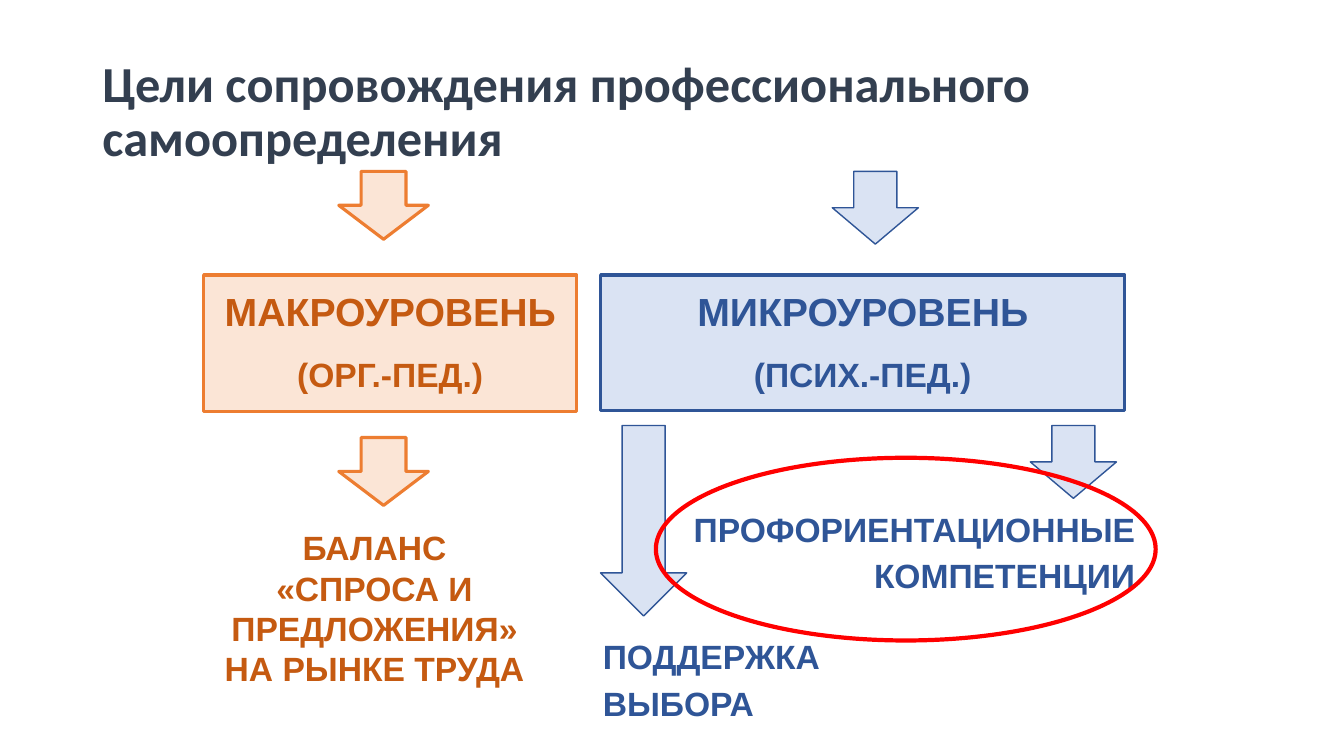
from pptx import Presentation
from pptx.dml.color import RGBColor
from pptx.enum.shapes import MSO_SHAPE
from pptx.enum.text import MSO_ANCHOR, PP_ALIGN
from pptx.util import Pt

RECTANGLE, DOWN_ARROW, OVAL = MSO_SHAPE.RECTANGLE, MSO_SHAPE.DOWN_ARROW, MSO_SHAPE.OVAL
TOP, MIDDLE = MSO_ANCHOR.TOP, MSO_ANCHOR.MIDDLE
LEFT, CENTER, RIGHT = PP_ALIGN.LEFT, PP_ALIGN.CENTER, PP_ALIGN.RIGHT

SLATE = RGBColor(0x33, 0x3F, 0x50)
PEACH = RGBColor(0xFB, 0xE5, 0xD6)
ORANGE = RGBColor(0xED, 0x7D, 0x31)
RUST = RGBColor(0xC5, 0x5A, 0x11)
PALE_BLUE = RGBColor(0xDA, 0xE3, 0xF3)
BLUE = RGBColor(0x2F, 0x55, 0x97)
RED = RGBColor(0xFF, 0x00, 0x00)

ARROW_TOP = 122.4
LEVEL_TOP = 196.5
MACRO_LEFT, MICRO_LEFT = 145.5, 429


def write_text(shape, lines, color, align, spacing=1.0, after=0, font="Arial", anchor=TOP):
    """Fill a shape with paragraphs given as (text, size) pairs."""
    frame = shape.text_frame
    frame.word_wrap = True
    frame.vertical_anchor = anchor
    frame.text = "\n".join(text for text, _ in lines)
    for para, (_, size) in zip(frame.paragraphs, lines):
        para.alignment = align
        para.line_spacing = spacing
        para.space_after = Pt(after)
        for span in para.runs:
            span.font.name = font
            span.font.size = Pt(size)
            span.font.bold = True
            span.font.color.rgb = color


def add_label(page, bounds, lines, color, align, **style):
    box = page.shapes.add_textbox(*map(Pt, bounds))
    write_text(box, lines, color, align, **style)


def add_outlined(page, kind, bounds, fill, line, weight):
    shape = page.shapes.add_shape(kind, *map(Pt, bounds))
    shape.shadow.inherit = False
    if fill is None:
        shape.fill.background()
    else:
        shape.fill.solid()
        shape.fill.fore_color.rgb = fill
    shape.line.color.rgb = line
    shape.line.width = Pt(weight)
    return shape


def add_level(page, bounds, name, scope, fill, line, color):
    box = add_outlined(page, RECTANGLE, bounds, fill, line, 2.25)
    write_text(box, [(name, 28), (scope, 24)], color, CENTER, spacing=1.15, after=10)


def add_macro_arrow(page, top):
    add_outlined(page, DOWN_ARROW, (242, top, 64, 48.5), PEACH, ORANGE, 2.25)


def add_micro_arrow(page, left, top, height):
    add_outlined(page, DOWN_ARROW, (left, top, 61.5, height), PALE_BLUE, BLUE, 1)


def main():
    deck = Presentation()
    deck.slide_width, deck.slide_height = Pt(960), Pt(540)
    page = deck.slides.add_slide(deck.slide_layouts[6])

    add_label(page, (66, 28.8, 828, 104.4),
              [("Цели сопровождения профессионального самоопределения", 36)],
              SLATE, LEFT, spacing=0.9, font="Calibri", anchor=MIDDLE)

    add_level(page, (MACRO_LEFT, LEVEL_TOP, 266.5, 97.5), "МАКРОУРОВЕНЬ", "(ОРГ.-ПЕД.)",
              PEACH, ORANGE, RUST)
    add_level(page, (MICRO_LEFT, LEVEL_TOP, 374.5, 96.5), "МИКРОУРОВЕНЬ", "(ПСИХ.-ПЕД.)",
              PALE_BLUE, BLUE, BLUE)

    for top in (ARROW_TOP, 312.5):
        add_macro_arrow(page, top)
    for left, top, height in ((594.5, ARROW_TOP, 52), (MICRO_LEFT, 304, 136), (736, 304, 52)):
        add_micro_arrow(page, left, top, height)

    add_label(page, (MACRO_LEFT, 373, 244, 67),
              [("БАЛАНС", 24), ("«СПРОСА И ПРЕДЛОЖЕНИЯ» НА РЫНКЕ ТРУДА", 24)], RUST, CENTER)
    add_label(page, (423.5, 446.5, 170, 67), [("ПОДДЕРЖКА ВЫБОРА", 24)],
              BLUE, LEFT, spacing=1.15, after=10)
    add_label(page, (480, 355.5, 338, 67), [("ПРОФОРИЕНТАЦИОННЫЕ КОМПЕТЕНЦИИ", 24)],
              BLUE, RIGHT, spacing=1.15, after=10)

    add_outlined(page, OVAL, (468.5, 327, 357, 130.5), None, RED, 3)

    deck.save("out.pptx")


if __name__ == "__main__":
    main()
